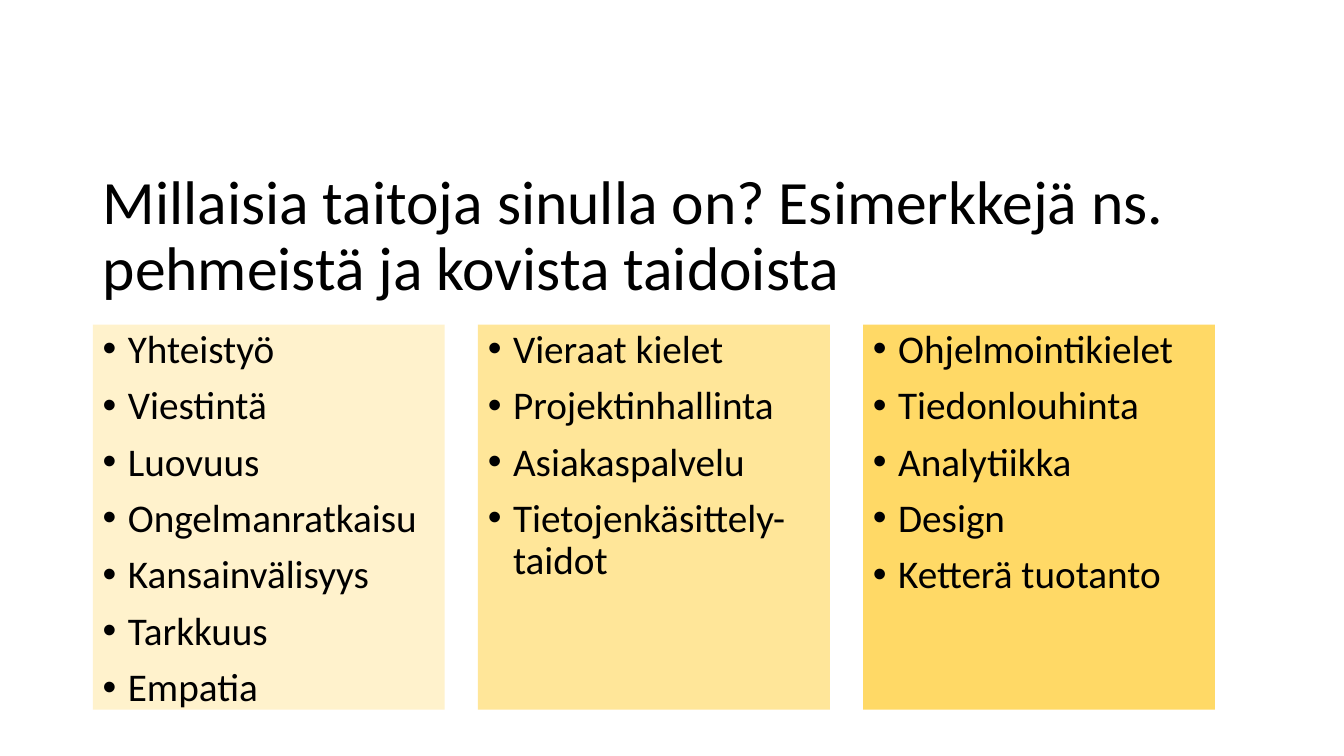
from dataclasses import dataclass

from lxml.etree import SubElement
from pptx import Presentation
from pptx.dml.color import RGBColor
from pptx.enum.shapes import MSO_SHAPE
from pptx.enum.text import MSO_ANCHOR, PP_ALIGN
from pptx.oxml.ns import qn
from pptx.slide import Slide
from pptx.util import Inches, Pt

FONT = "Calibri"
BLACK = RGBColor(0x00, 0x00, 0x00)
PALE_YELLOW = RGBColor(0xFF, 0xF2, 0xCC)
LIGHT_YELLOW = RGBColor(0xFF, 0xE6, 0x99)
GOLD = RGBColor(0xFF, 0xD9, 0x66)

# Grid, in inches
LEFT = 0.92
COLUMN_WIDTH, COLUMN_GAP = 3.49, 0.33
TITLE_TOP, TITLE_WIDTH, TITLE_HEIGHT = 1.63, 11.25, 1.45
COLUMN_TOP, COLUMN_HEIGHT = 3.22, 3.82
BULLET_INDENT = Inches(0.25)

TITLE = "Millaisia taitoja sinulla on? Esimerkkejä ns. pehmeistä ja kovista taidoista"


@dataclass(frozen=True)
class SkillColumn:
    fill: RGBColor
    skills: tuple[str, ...]


COLUMNS = (
    SkillColumn(PALE_YELLOW, (
        "Yhteistyö", "Viestintä", "Luovuus", "Ongelmanratkaisu",
        "Kansainvälisyys", "Tarkkuus", "Empatia",
    )),
    SkillColumn(LIGHT_YELLOW, (
        "Vieraat kielet", "Projektinhallinta", "Asiakaspalvelu",
        "Tietojenkäsittely-taidot",
    )),
    SkillColumn(GOLD, (
        "Ohjelmointikielet", "Tiedonlouhinta", "Analytiikka", "Design",
        "Ketterä tuotanto",
    )),
)


def style_paragraph(paragraph, size: int) -> None:
    paragraph.alignment = PP_ALIGN.LEFT
    paragraph.line_spacing = 0.9
    paragraph.font.name = FONT
    paragraph.font.size = Pt(size)
    paragraph.font.color.rgb = BLACK


def add_bullet(paragraph) -> None:
    properties = paragraph._p.get_or_add_pPr()
    properties.set("marL", str(BULLET_INDENT))
    properties.set("indent", str(-BULLET_INDENT))
    SubElement(properties, qn("a:buFont"), typeface="Arial")
    SubElement(properties, qn("a:buChar"), char="•")


def add_title(page: Slide) -> None:
    box = page.shapes.add_textbox(
        Inches(LEFT), Inches(TITLE_TOP), Inches(TITLE_WIDTH), Inches(TITLE_HEIGHT)
    )
    frame = box.text_frame
    frame.word_wrap = True
    frame.vertical_anchor = MSO_ANCHOR.MIDDLE
    frame.text = TITLE
    style_paragraph(frame.paragraphs[0], 44)


def add_skill_column(page: Slide, index: int, column: SkillColumn) -> None:
    box = page.shapes.add_shape(
        MSO_SHAPE.RECTANGLE,
        Inches(LEFT + index * (COLUMN_WIDTH + COLUMN_GAP)), Inches(COLUMN_TOP),
        Inches(COLUMN_WIDTH), Inches(COLUMN_HEIGHT),
    )
    box.shadow.inherit = False
    box.fill.solid()
    box.fill.fore_color.rgb = column.fill
    box.line.fill.background()
    frame = box.text_frame
    frame.word_wrap = True
    frame.vertical_anchor = MSO_ANCHOR.TOP
    frame.text = "\n".join(column.skills)
    for position, paragraph in enumerate(frame.paragraphs):
        add_bullet(paragraph)
        style_paragraph(paragraph, 28)
        paragraph.space_before = Pt(10 if position else 0)


def main() -> None:
    deck = Presentation()
    deck.slide_width, deck.slide_height = Inches(13.33), Inches(7.5)
    page = deck.slides.add_slide(deck.slide_layouts[6])
    add_title(page)
    for index, column in enumerate(COLUMNS):
        add_skill_column(page, index, column)
    deck.save("out.pptx")


if __name__ == "__main__":
    main()
